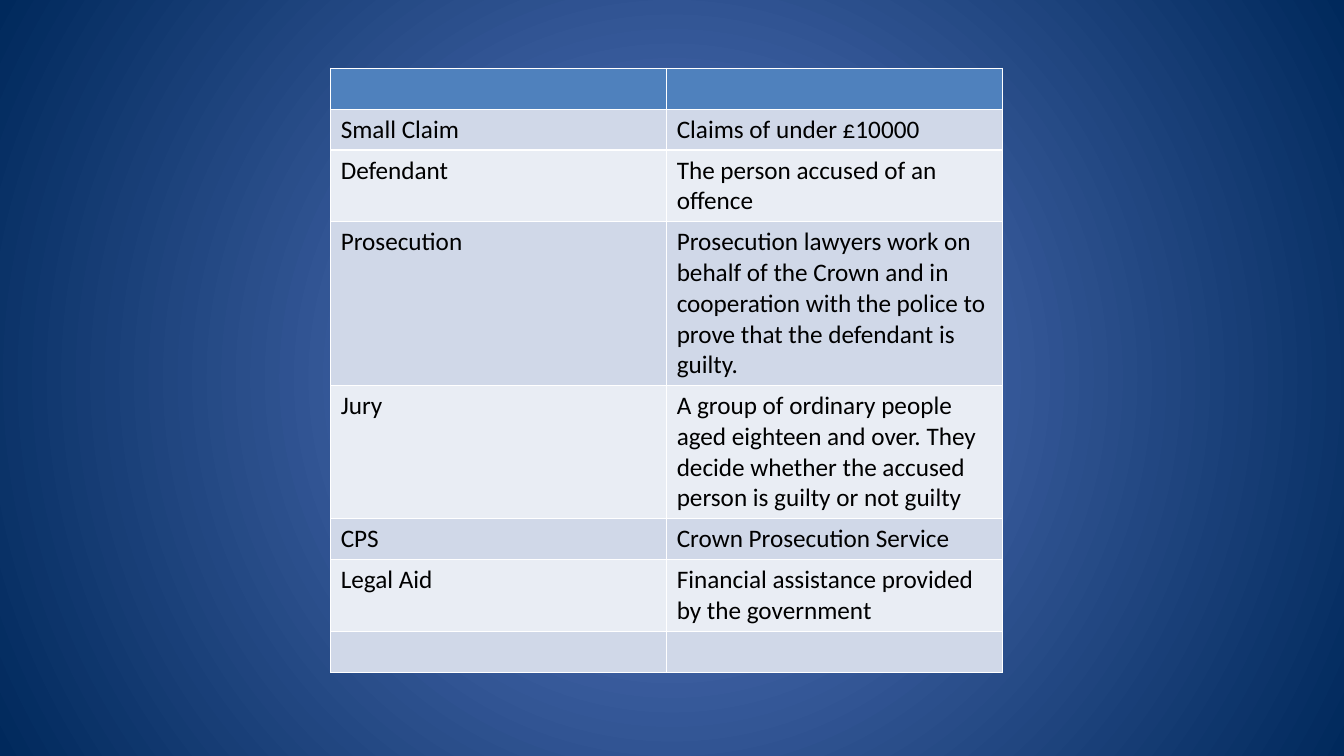
from dataclasses import dataclass

from lxml.etree import SubElement
from pptx import Presentation
from pptx.dml.color import RGBColor as Rgb
from pptx.oxml.ns import qn
from pptx.slide import Slide
from pptx.table import _Cell as Cell
from pptx.util import Emu, Pt

SCALE = 9525
FONT = "Calibri"
HEAD = "4F81BD"
BANDS = ("D0D8E8", "E9EDF4")
EDGE = "FFFFFF"


@dataclass(frozen=True)
class Term:
    name: str = ""
    sense: str = ""


TERMS = (
    Term(),
    Term("Small Claim", "Claims of under £10000"),
    Term("Defendant", "The person accused of an offence"),
    Term(
        "Prosecution",
        "Prosecution lawyers work on behalf of the Crown and in cooperation "
        "with the police to prove that the defendant is guilty.",
    ),
    Term(
        "Jury",
        "A group of ordinary people aged eighteen and over. They decide "
        "whether the accused person is guilty or not guilty",
    ),
    Term("CPS", "Crown Prosecution Service"),
    Term("Legal Aid", "Financial assistance provided by the government"),
    Term(),
)


def px(size: int) -> Emu:
    return Emu(size * SCALE)


def color(code: str) -> Rgb:
    return Rgb.from_string(code)


def paint_back(slide: Slide, inner: str, outer: str) -> None:
    fill = slide.background.fill
    fill.gradient()
    for stop, code, spot in zip(fill.gradient_stops, (inner, outer), (0, 1)):
        stop.color.rgb = color(code)
        stop.position = spot
    grad = slide.element.find(".//" + qn("a:gradFill"))
    grad.remove(grad.find(qn("a:lin")))
    ring = SubElement(grad, qn("a:path"), {"path": "circle"})
    sides = {side: "50000" for side in "ltrb"}
    SubElement(ring, qn("a:fillToRect"), sides)


def draw_edges(cell: Cell) -> None:
    props = cell._tc.get_or_add_tcPr()
    for side in "LRTB":
        line = SubElement(props, qn(f"a:ln{side}"), {"w": str(Pt(1))})
        solid = SubElement(line, qn("a:solidFill"))
        SubElement(solid, qn("a:srgbClr"), {"val": EDGE})


def fill_cell(cell: Cell, text: str, shade: str) -> None:
    draw_edges(cell)
    cell.fill.solid()
    cell.fill.fore_color.rgb = color(shade)
    cell.text = text
    font = cell.text_frame.paragraphs[0].font
    font.name = FONT
    font.size = Pt(18)
    font.color.rgb = color("000000")


def draw_terms(slide: Slide, left: int, top: int, wide: int, high: int) -> None:
    count = len(TERMS)
    frame = slide.shapes.add_table(
        count, 2, px(left), px(top), px(2 * wide), px(count * high)
    )
    table = frame.table
    for row, term in enumerate(TERMS):
        shade = BANDS[(row - 1) % 2] if row else HEAD
        for col, text in enumerate((term.name, term.sense)):
            fill_cell(table.cell(row, col), text, shade)


def main() -> None:
    deck = Presentation()
    deck.slide_width = px(1280)
    deck.slide_height = px(720)
    slide = deck.slides.add_slide(deck.slide_layouts[6])
    paint_back(slide, "5E7CC5", "00295C")
    draw_terms(slide, 315, 65, 320, 39)
    deck.save("out.pptx")


if __name__ == "__main__":
    main()
